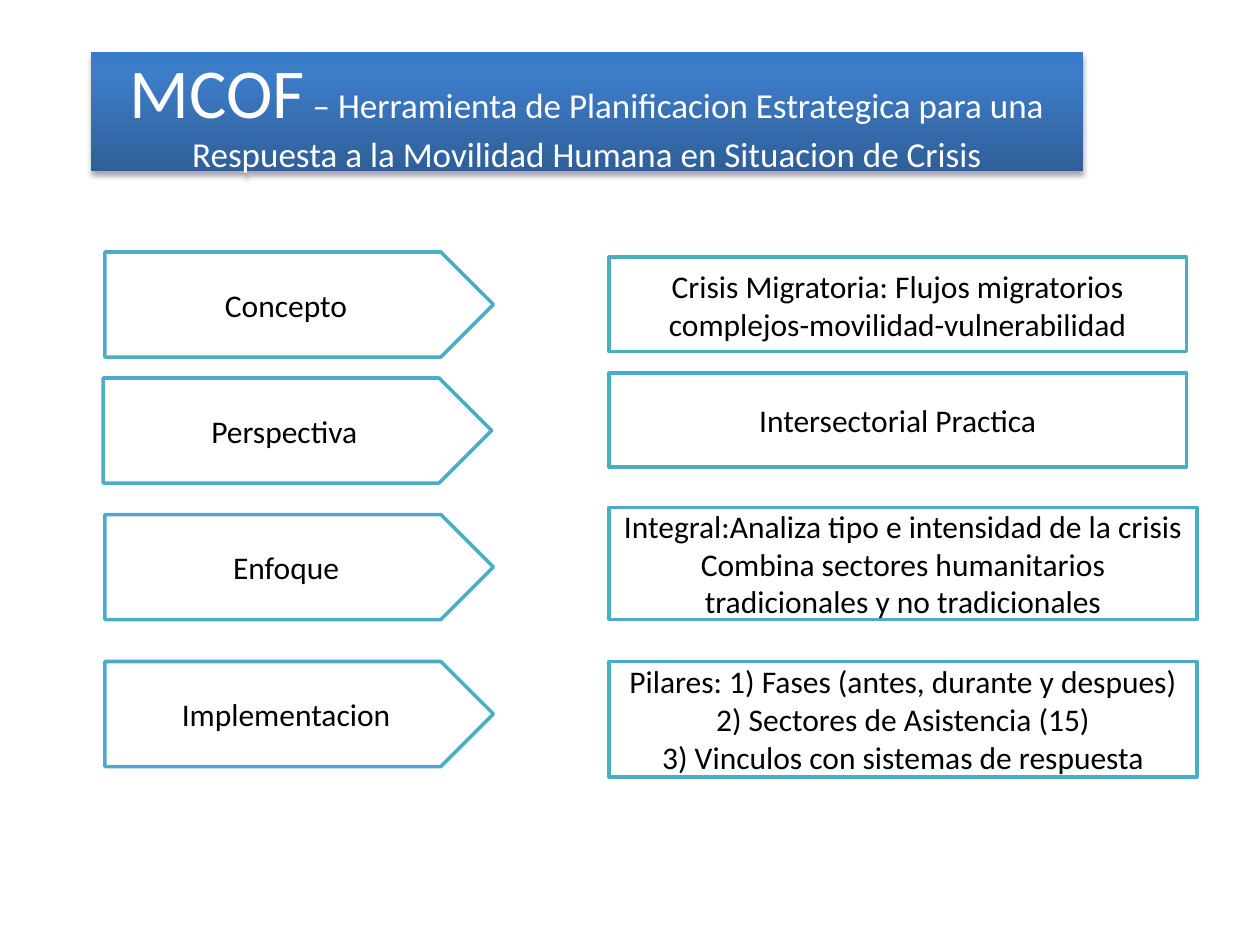
"""Build the MCOF planning slide: a title banner and four topic rows."""
from dataclasses import dataclass

from lxml import etree
from pptx import Presentation
from pptx.dml.color import RGBColor
from pptx.enum.shapes import MSO_SHAPE
from pptx.enum.text import MSO_ANCHOR, MSO_AUTO_SIZE, PP_ALIGN
from pptx.util import Pt

ARROW = MSO_SHAPE.PENTAGON
RECT = MSO_SHAPE.RECTANGLE
MID = MSO_ANCHOR.MIDDLE
FIXED = MSO_AUTO_SIZE.NONE
CENTER = PP_ALIGN.CENTER
NS = "http://schemas.openxmlformats.org/drawingml/2006/main"


@dataclass(frozen=True)
class Theme:
    """Hold the colours, type sizes and line width of the slide."""
    font: str = "Calibri"
    white: str = "FFFFFF"
    black: str = "000000"
    teal: str = "4BACC6"
    blues: tuple = ((0, "2F5F99"), (80, "3D7CC7"), (100, "3A7CCB"))
    big: int = 40
    mid: int = 20
    body: int = 18
    line: int = 2


THEME = Theme()

TITLE = [
    ("MCOF", THEME.big),
    (" – Herramienta de Planificacion Estrategica para una Respuesta"
     " a la Movilidad Humana en Situacion de Crisis", THEME.mid),
]

ROWS = [
    ("Concepto", (60, 144), (348, 147, 330, 54),
     ["Crisis Migratoria: Flujos migratorios complejos-movilidad-vulnerabilidad"]),
    ("Perspectiva", (59, 216), (348, 213, 330, 54),
     ["Intersectorial Practica"]),
    ("Enfoque", (60, 294), (348, 290, 336, 64),
     ["Integral:Analiza tipo e intensidad de la crisis",
      "Combina sectores humanitarios tradicionales y no tradicionales"]),
    ("Implementacion", (60, 378), (348, 378, 336, 66),
     ["Pilares: 1) Fases (antes, durante y despues)",
      "2) Sectores de Asistencia (15)",
      "3) Vinculos con sistemas de respuesta"]),
]


def color(code):
    """Turn a hex code into a colour."""
    return RGBColor.from_string(code)


def write(shape, paras, ink):
    """Fill a shape with centred paragraphs of (text, size) runs."""
    frame = shape.text_frame
    frame.word_wrap = True
    frame.auto_size = FIXED
    frame.vertical_anchor = MID
    for index, runs in enumerate(paras):
        para = frame.add_paragraph() if index else frame.paragraphs[0]
        para.alignment = CENTER
        for text, size in runs:
            run = para.add_run()
            run.text = text
            run.font.name = THEME.font
            run.font.size = Pt(size)
            run.font.color.rgb = color(ink)


def shade(shape):
    """Give a shape the blue gradient and a soft shadow below."""
    stops = "".join(
        f'<a:gs pos="{pos * 1000}"><a:srgbClr val="{code}"/></a:gs>'
        for pos, code in THEME.blues)
    fill = (f'<a:gradFill xmlns:a="{NS}" rotWithShape="1"><a:gsLst>{stops}'
            '</a:gsLst><a:lin ang="16200000" scaled="0"/></a:gradFill>')
    glow = (f'<a:effectLst xmlns:a="{NS}"><a:outerShdw blurRad="{Pt(3.1)}" '
            f'dist="{Pt(1.8)}" dir="5400000" rotWithShape="0">'
            f'<a:srgbClr val="{THEME.black}"><a:alpha val="35000"/></a:srgbClr>'
            '</a:outerShdw></a:effectLst>')
    for part in (fill, glow):
        shape.element.spPr.append(etree.fromstring(part))


def banner(slide):
    """Place and format the title."""
    title = slide.shapes.title
    title.left, title.top = Pt(52), Pt(30)
    title.width, title.height = Pt(567), Pt(68)
    shade(title)
    write(title, [TITLE], THEME.white)


def panel(slide, kind, box, lines):
    """Add a white outlined shape with one paragraph per line."""
    shape = slide.shapes.add_shape(kind, *map(Pt, box))
    shape.shadow.inherit = False
    shape.fill.solid()
    shape.fill.fore_color.rgb = color(THEME.white)
    shape.line.color.rgb = color(THEME.teal)
    shape.line.width = Pt(THEME.line)
    write(shape, [[(line, THEME.body)] for line in lines], THEME.black)


def main():
    """Build the slide and save it."""
    deck = Presentation()
    deck.slide_width, deck.slide_height = Pt(720), Pt(540)
    slide = deck.slides.add_slide(deck.slide_layouts.get_by_name("Title Only"))
    banner(slide)
    for name, spot, box, lines in ROWS:
        panel(slide, ARROW, (*spot, 222, 60), [name])
        panel(slide, RECT, box, lines)
    deck.save("out.pptx")


if __name__ == "__main__":
    main()
